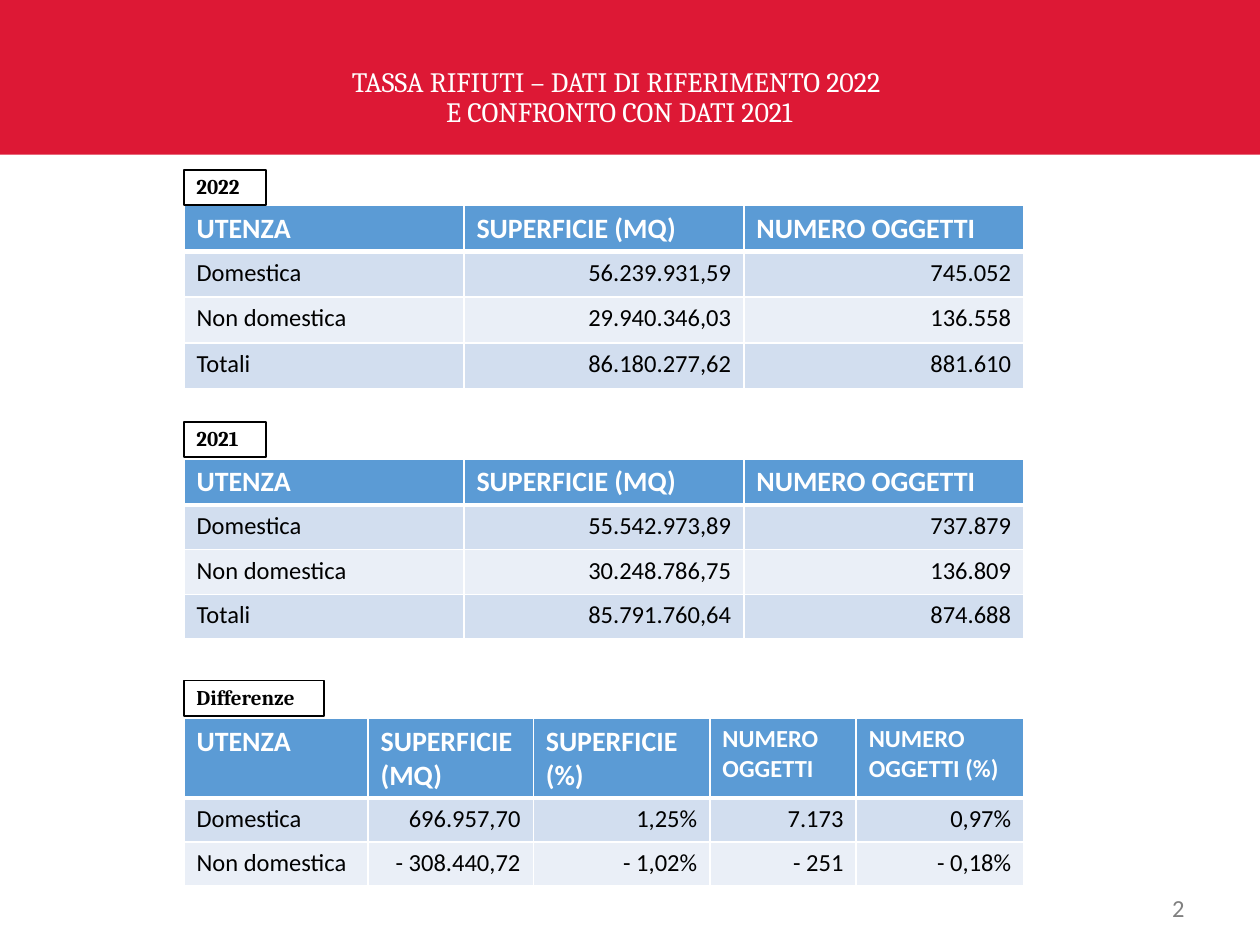
from pptx import Presentation
from pptx.dml.color import RGBColor
from pptx.enum.shapes import MSO_SHAPE as Shape
from pptx.enum.text import MSO_ANCHOR as Anchor, PP_ALIGN as Align
from pptx.oxml import parse_xml
from pptx.oxml.ns import nsdecls
from pptx.util import Cm, Pt

RED = RGBColor(0xDD, 0x18, 0x35)
BLUE = RGBColor(0x5B, 0x9B, 0xD5)
BAND_DARK = RGBColor(0xD2, 0xDE, 0xEF)
BAND_LIGHT = RGBColor(0xEA, 0xEF, 0xF7)
GREY = RGBColor(0x80, 0x80, 0x80)
WHITE = RGBColor(0xFF, 0xFF, 0xFF)
BLACK = RGBColor(0, 0, 0)

PAGE_WIDTH, PAGE_HEIGHT = 25.4, 19.05
LEFT, TABLE_WIDTH = 3.71, 16.93
LABEL_HEIGHT = 0.71

YEAR_HEADER = [("UTENZA", 16), ("SUPERFICIE (MQ)", 16), ("NUMERO OGGETTI", 16)]
YEAR_COLUMNS = [TABLE_WIDTH / 3] * 3
DIFFERENCE_HEADER = [
    ("UTENZA", 16), ("SUPERFICIE (MQ)", 16), ("SUPERFICIE (%)", 16),
    ("NUMERO OGGETTI", 14), ("NUMERO OGGETTI (%)", 14),
]
DIFFERENCE_COLUMNS = [3.71, 3.33, 3.56, 2.95, 3.38]

ROWS_2022 = [
    ("Domestica", "56.239.931,59", "745.052"),
    ("Non domestica", "29.940.346,03", "136.558"),
    ("Totali", "86.180.277,62", "881.610"),
]
ROWS_2021 = [
    ("Domestica", "55.542.973,89", "737.879"),
    ("Non domestica", "30.248.786,75", "136.809"),
    ("Totali", "85.791.760,64", "874.688"),
]
ROWS_DIFFERENCE = [
    ("Domestica", "696.957,70", "1,25%", "7.173", "0,97%"),
    ("Non domestica", "- 308.440,72", "- 1,02%", "- 251", "- 0,18%"),
]


def add_span(para, text, font, size, color, bold=False):
    span = para.add_run()
    span.text = text
    span.font.name = font
    span.font.size = Pt(size)
    span.font.color.rgb = color
    span.font.bold = bold


def add_rectangle(page, left, top, width, height, fill):
    box = page.shapes.add_shape(
        Shape.RECTANGLE, Cm(left), Cm(top), Cm(width), Cm(height))
    box.shadow.inherit = False
    box.fill.solid()
    box.fill.fore_color.rgb = fill
    box.line.fill.background()
    return box


def add_text_box(page, left, top, width, height, anchor, align):
    box = page.shapes.add_textbox(Cm(left), Cm(top), Cm(width), Cm(height))
    box.text_frame.word_wrap = True
    box.text_frame.vertical_anchor = anchor
    para = box.text_frame.paragraphs[0]
    para.alignment = align
    return para


def add_banner(page, left, top, width, height):
    add_rectangle(page, left, top, width, height, RED)
    para = add_text_box(page, left + 4.09, top + 1.17, 16.79, 1.55,
                        Anchor.BOTTOM, Align.CENTER)
    para.line_spacing = 0.9
    add_span(para, "TASSA RIFIUTI – DATI DI RIFERIMENTO 2022 ", "Cambria", 16, WHITE)
    para.add_line_break()
    add_span(para, "E CONFRONTO CON DATI 2021", "Cambria", 16, WHITE)


def add_label(page, left, top, width, text):
    box = add_rectangle(page, left, top, width, LABEL_HEIGHT, WHITE)
    box.line.color.rgb = BLACK
    box.line.width = Pt(1)
    box.text_frame.word_wrap = True
    box.text_frame.vertical_anchor = Anchor.MIDDLE
    para = box.text_frame.paragraphs[0]
    para.alignment = Align.LEFT
    para.line_spacing = 0.9
    add_span(para, text, "Cambria", 12, BLACK, bold=True)


def style_cell(cell, fill, bottom_width):
    properties = cell._tc.get_or_add_tcPr()
    for side, width in (("L", 1), ("R", 1), ("T", 1), ("B", bottom_width)):
        properties.append(parse_xml(
            f'<a:ln{side} {nsdecls("a")} w="{Pt(width)}"><a:solidFill>'
            f'<a:srgbClr val="{WHITE}"/></a:solidFill></a:ln{side}>'))
    cell.fill.solid()
    cell.fill.fore_color.rgb = fill


def add_data_table(page, left, top, columns, heights, header, rows):
    frame = page.shapes.add_table(
        len(rows) + 1, len(columns), Cm(left), Cm(top),
        Cm(sum(columns)), Cm(sum(heights)))
    table = frame.table
    for column, width in zip(table.columns, columns):
        column.width = Cm(width)
    for row, height in zip(table.rows, heights):
        row.height = Cm(height)
    for c, (text, size) in enumerate(header):
        cell = table.cell(0, c)
        style_cell(cell, BLUE, 3)
        add_span(cell.text_frame.paragraphs[0], text, "Calibri", size, WHITE, bold=True)
    for r, values in enumerate(rows, start=1):
        for c, text in enumerate(values):
            cell = table.cell(r, c)
            style_cell(cell, BAND_DARK if r % 2 else BAND_LIGHT, 3 if r == 0 else 1)
            para = cell.text_frame.paragraphs[0]
            para.alignment = Align.RIGHT if c else Align.LEFT
            add_span(para, text, "Calibri", 14, BLACK)


def add_section(page, left, top, label, label_width, gap, columns, heights, header, rows):
    add_data_table(page, left, top + LABEL_HEIGHT + gap, columns, heights, header, rows)
    add_label(page, left, top, label_width, label)


def add_page_number(page, left, top, width, height):
    para = add_text_box(page, left, top, width, height, Anchor.MIDDLE, Align.RIGHT)
    add_span(para, "2", "Calibri", 14, GREY)


def main():
    deck = Presentation()
    deck.slide_width, deck.slide_height = Cm(PAGE_WIDTH), Cm(PAGE_HEIGHT)
    page = deck.slides.add_slide(deck.slide_layouts[6])
    add_banner(page, 0, 0, PAGE_WIDTH, 3.12)
    add_section(page, LEFT, 3.43, "2022", 1.65, 0, YEAR_COLUMNS,
                [0.92] * 4, YEAR_HEADER, ROWS_2022)
    add_section(page, LEFT, 8.51, "2021", 1.65, 0.03, YEAR_COLUMNS,
                [0.9] * 4, YEAR_HEADER, ROWS_2021)
    add_section(page, LEFT, 13.72, "Differenze", 2.82, 0.05, DIFFERENCE_COLUMNS,
                [1.61, 0.88, 0.88], DIFFERENCE_HEADER, ROWS_DIFFERENCE)
    add_page_number(page, 18.21, 17.93, 5.92, 0.74)
    deck.save("out.pptx")


if __name__ == "__main__":
    main()
